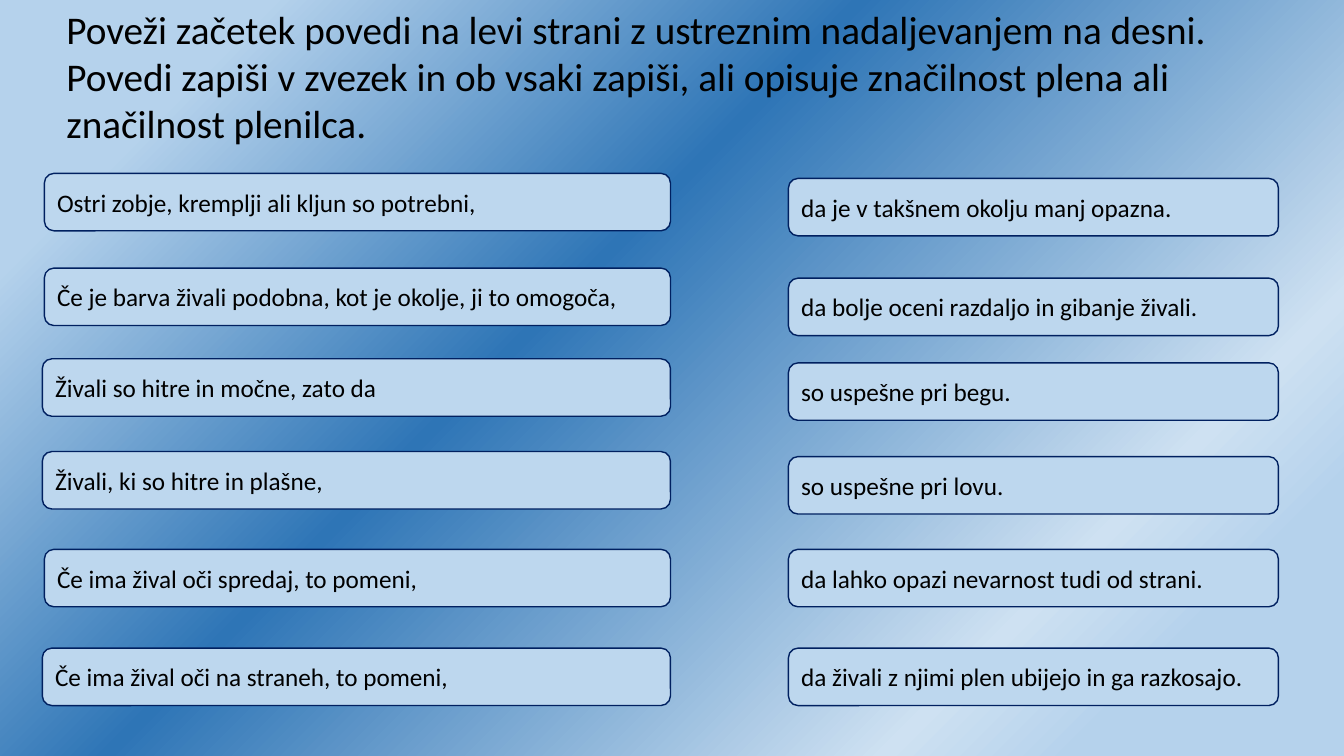
from pptx import Presentation
from pptx.dml.color import RGBColor
from pptx.enum import shapes, text
from pptx.oxml import parse_xml
from pptx.oxml.ns import nsdecls, qn
from pptx.util import Inches, Pt

HUES = {"box": "BDD7EE", "edge": "002060", "ink": "000000",
        "pale": "B5D2EC", "light": "CEE1F2", "deep": "2E75B6"}
STOPS = [(13, "pale"), (22, "light"), (59, "deep"), (87, "pale")]
FONT = "Calibri"
HIGH = 0.57

TITLE = [
    "Poveži začetek povedi na levi strani z ustreznim nadaljevanjem na desni.",
    "Povedi zapiši v zvezek in ob vsaki zapiši, ali opisuje značilnost plena "
    "ali značilnost plenilca.",
]
# Each row: left edge, top, wording
STARTS = [
    (0.44, 1.72, "Ostri zobje, kremplji ali kljun so potrebni,"),
    (0.44, 2.66, "Če je barva živali podobna, kot je okolje, ji to omogoča,"),
    (0.42, 3.56, "Živali so hitre in močne, zato da"),
    (0.42, 4.48, "Živali, ki so hitre in plašne,"),
    (0.44, 5.45, "Če ima žival oči spredaj, to pomeni,"),
    (0.42, 6.43, "Če ima žival oči na straneh, to pomeni,"),
]
ENDS = [
    (7.82, 1.77, "da je v takšnem okolju manj opazna."),
    (7.82, 2.76, "da bolje oceni razdaljo in gibanje živali."),
    (7.82, 3.6, "so uspešne pri begu."),
    (7.82, 4.53, "so uspešne pri lovu."),
    (7.82, 5.45, "da lahko opazi nevarnost tudi od strani."),
    (7.82, 6.43, "da živali z njimi plen ubijejo in ga razkosajo."),
]


def hue(name):
    return RGBColor.from_string(HUES[name])


def style(frame, size):
    for para in frame.paragraphs:
        para.alignment = text.PP_ALIGN.LEFT
        for run in para.runs:
            run.font.name = FONT
            run.font.size = Pt(size)
            run.font.color.rgb = hue("ink")


def paint(slide):
    """Fill the background with a gradient from the lower right corner."""
    slide.background.fill.gradient()
    old = slide.element.find(".//" + qn("a:gradFill"))
    stops = "".join(
        f'<a:gs pos="{pos * 1000}"><a:srgbClr val="{HUES[name]}"/></a:gs>'
        for pos, name in STOPS)
    new = parse_xml(
        f'<a:gradFill {nsdecls("a")} rotWithShape="1"><a:gsLst>{stops}</a:gsLst>'
        '<a:path path="circle"><a:fillToRect l="100000" t="100000"/></a:path>'
        '<a:tileRect r="-100000" b="-100000"/></a:gradFill>')
    old.getparent().replace(old, new)


def head(slide, left, top, width, height):
    """Place the instructions."""
    box = slide.shapes.add_textbox(
        Inches(left), Inches(top), Inches(width), Inches(height))
    frame = box.text_frame
    frame.word_wrap = True
    frame.auto_size = text.MSO_AUTO_SIZE.SHAPE_TO_FIT_TEXT
    frame.text = "\n".join(TITLE)
    style(frame, 28)


def column(slide, rows, right):
    """Place a column of sentence parts that share one right edge."""
    for left, top, words in rows:
        box = slide.shapes.add_shape(
            shapes.MSO_SHAPE.ROUNDED_RECTANGLE, Inches(left), Inches(top),
            Inches(right - left), Inches(HIGH))
        box.shadow.inherit = False
        box.fill.solid()
        box.fill.fore_color.rgb = hue("box")
        box.line.color.rgb = hue("edge")
        box.line.width = Pt(1)
        frame = box.text_frame
        frame.word_wrap = True
        frame.vertical_anchor = text.MSO_ANCHOR.MIDDLE
        frame.text = words
        style(frame, 18)


def main():
    deck = Presentation()
    deck.slide_width = Inches(13.33)
    deck.slide_height = Inches(7.5)
    slide = deck.slides.add_slide(deck.slide_layouts[6])
    paint(slide)
    column(slide, STARTS, 6.65)
    column(slide, ENDS, 12.68)
    head(slide, 0.56, 0, 11.62, 1.51)
    deck.save("out.pptx")


if __name__ == "__main__":
    main()
